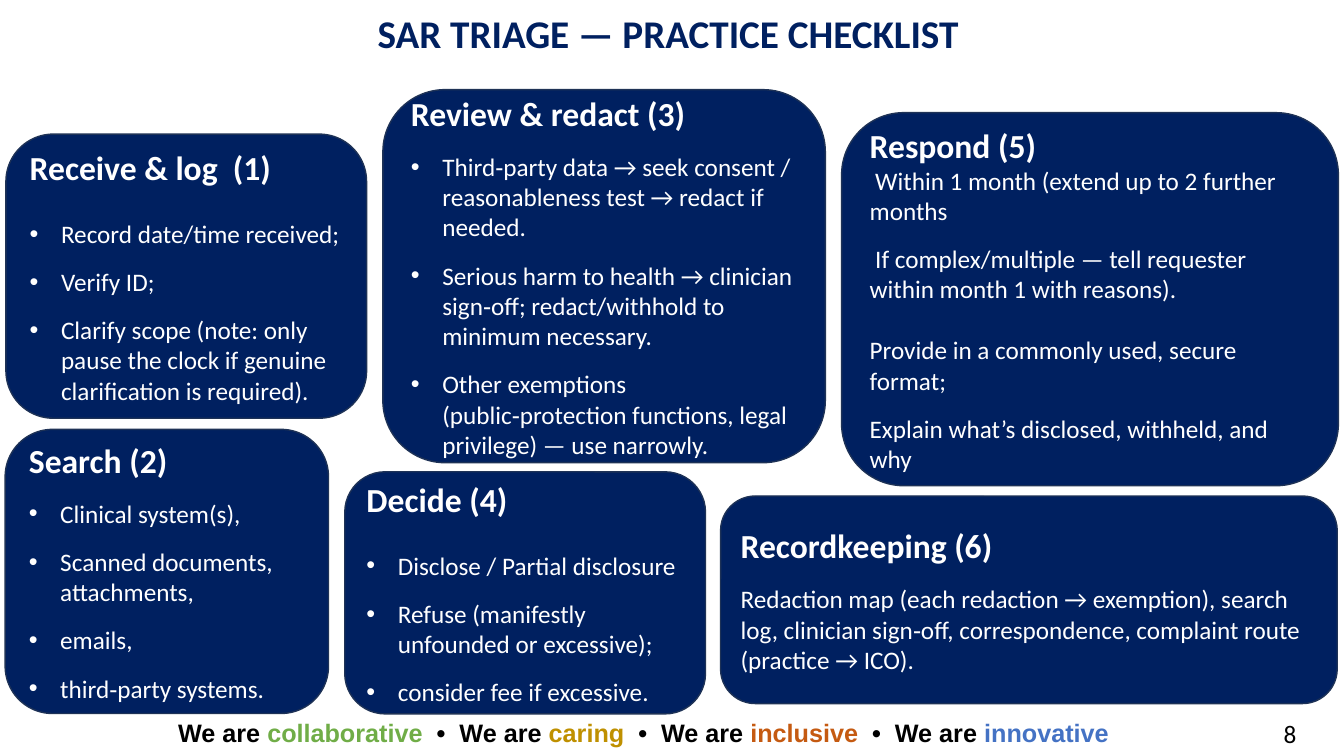
from lxml import etree
from pptx import Presentation
from pptx import util as u
from pptx.dml.color import RGBColor
from pptx.enum import shapes, text
from pptx.oxml.ns import qn

COLOURS = {
    "navy": "002060", "edge": "1E3256", "white": "FFFFFF", "black": "000000",
    "green": "70AD47", "gold": "BF9000", "orange": "C55A11", "blue": "4472C4",
}
GAP, WIDE_GAP = 12.8, 22  # points between paragraphs
BULLET_INDENT = u.Cm(0.79)
FIRST_LINE_INDENT = u.Cm(0.14)

# Heading, box in cm, then (paragraph style, space before, words)
CARDS = [
    ("Receive & log  (1)", (0.15, 3.38, 9.09, 7.16), [
        ("bullet", WIDE_GAP, "Record date/time received;"),
        ("bullet", GAP, "Verify ID;"),
        ("bullet", GAP, "Clarify scope (note: only pause the clock if genuine "
                        "clarification is required)."),
    ]),
    ("Search (2)", (0.13, 10.82, 8.15, 7.16), [
        ("bullet", GAP, "Clinical system(s),"),
        ("bullet", GAP, "Scanned documents, attachments,"),
        ("bullet", GAP, "emails,"),
        ("bullet", GAP, "third‑party systems."),
    ]),
    ("Review & redact (3)", (9.65, 2.26, 11.15, 9.4), [
        ("bullet", GAP, "Third‑party data → seek consent / reasonableness test "
                        "→ redact if needed."),
        ("bullet", GAP, "Serious harm to health → clinician sign‑off; "
                        "redact/withhold to minimum necessary."),
        ("bullet", GAP, "Other exemptions (public‑protection functions, legal "
                        "privilege) — use narrowly."),
    ]),
    ("Decide (4)", (8.69, 11.89, 9.09, 6.1), [
        ("bullet", WIDE_GAP, "Disclose / Partial disclosure"),
        ("bullet", GAP, "Refuse (manifestly unfounded or excessive);"),
        ("bullet", GAP, "consider fee if excessive."),
    ]),
    ("Respond (5)", (21.21, 2.84, 12.52, 9.4), [
        ("indented", 0, "Within 1 month (extend up to 2 further months"),
        ("indented", GAP, "If complex/multiple — tell requester within month 1 "
                          "with reasons)."),
        ("plain", WIDE_GAP, "Provide in a commonly used, secure format;"),
        ("plain", GAP, "Explain what’s disclosed, withheld, and why"),
    ]),
    ("Recordkeeping (6)", (18.16, 12.5, 15.54, 5.23), [
        ("plain", GAP, "Redaction map (each redaction → exemption), search log, "
                       "clinician sign‑off, correspondence, complaint route "
                       "(practice → ICO)."),
    ]),
]
VALUES = [("collaborative", "green"), ("caring", "gold"),
          ("inclusive", "orange"), ("innovative", "blue")]


class SlideBuilder:
    formats = {
        "title": {"name": "Calibri", "size": u.Pt(28), "bold": True},
        "heading": {"name": "Calibri", "size": u.Pt(24), "bold": True},
        "body": {"name": "Calibri", "size": u.Pt(18), "bold": False},
        "footer": {"name": "Arial", "size": u.Pt(18), "bold": True},
    }

    def __init__(self, slide):
        self.slide = slide

    def colour(self, name):
        return RGBColor.from_string(COLOURS[name])

    def add_words(self, paragraph, words, style, colour):
        run = paragraph.add_run()
        run.text = words
        for attribute, value in self.formats[style].items():
            setattr(run.font, attribute, value)
        run.font.color.rgb = self.colour(colour)

    def label(self, box, runs, style, align=text.PP_ALIGN.LEFT,
              anchor=text.MSO_ANCHOR.TOP):
        """Add a one-line text box; runs are (words, colour) pairs."""
        frame = self.slide.shapes.add_textbox(*map(u.Cm, box)).text_frame
        frame.word_wrap = True
        frame.vertical_anchor = anchor
        paragraph = frame.paragraphs[0]
        paragraph.alignment = align
        for words, colour in runs:
            self.add_words(paragraph, words, style, colour)

    def indent(self, paragraph, style):
        properties = paragraph._p.get_or_add_pPr()
        if style == "bullet":
            properties.set("marL", str(BULLET_INDENT))
            properties.set("indent", str(-BULLET_INDENT))
            etree.SubElement(properties, qn("a:buFont"), typeface="Arial")
            etree.SubElement(properties, qn("a:buChar"), char="•")
        elif style == "indented":
            properties.set("indent", str(FIRST_LINE_INDENT))

    def card(self, heading, box, items):
        shape = self.slide.shapes.add_shape(
            shapes.MSO_SHAPE.ROUNDED_RECTANGLE, *map(u.Cm, box))
        shape.shadow.inherit = False
        shape.fill.solid()
        shape.fill.fore_color.rgb = self.colour("navy")
        shape.line.color.rgb = self.colour("edge")
        shape.line.width = u.Pt(1)
        frame = shape.text_frame
        frame.word_wrap = True
        frame.vertical_anchor = text.MSO_ANCHOR.MIDDLE
        first = frame.paragraphs[0]
        first.alignment = text.PP_ALIGN.LEFT
        self.add_words(first, heading, "heading", "white")
        for style, gap, words in items:
            paragraph = frame.add_paragraph()
            self.indent(paragraph, style)
            paragraph.alignment = text.PP_ALIGN.LEFT
            paragraph.space_before = u.Pt(gap)
            self.add_words(paragraph, words, "body", "white")


def main():
    presentation = Presentation()
    presentation.slide_width = u.Cm(33.87)
    presentation.slide_height = u.Cm(19.05)
    slide = presentation.slides.add_slide(presentation.slide_layouts[6])
    builder = SlideBuilder(slide)

    footer = []
    for index, (value, colour) in enumerate(VALUES):
        footer.append(("  •  We are " if index else "We are ", "black"))
        footer.append((value, colour))
    builder.label((4.24, 17.96, 25.4, 1.02), footer, "footer")
    builder.label((28.22, 17.98, 4.7, 1.02), [("8", "black")], "body",
                  align=text.PP_ALIGN.RIGHT)
    builder.label((6.65, 0, 20.37, 1.65),
                  [("SAR TRIAGE — PRACTICE CHECKLIST", "navy")], "title",
                  align=text.PP_ALIGN.CENTER, anchor=text.MSO_ANCHOR.MIDDLE)
    for heading, box, items in CARDS:
        builder.card(heading, box, items)

    presentation.save("out.pptx")


if __name__ == "__main__":
    main()
